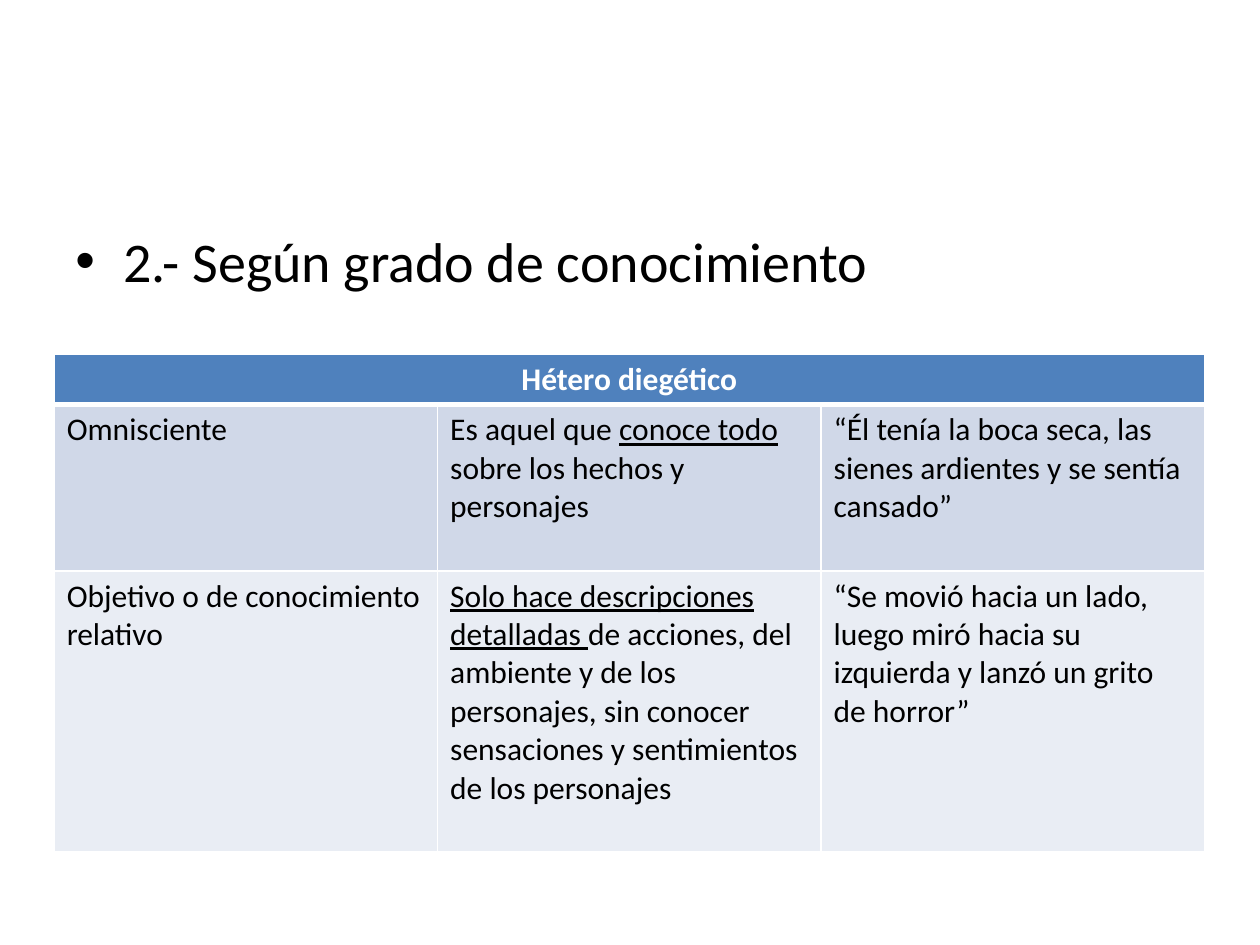
from lxml import etree
from pptx import Presentation
from pptx import util as u
from pptx.dml.color import RGBColor
from pptx.enum import text
from pptx.oxml.ns import qn

WIDE, HIGH = u.Inches(10), u.Inches(7.5)
FONT = "Calibri"
HEAD = "Hétero diegético"
# Each cell is a list of (words, underlined) runs.
ROWS = [
    [[("Omnisciente", False)],
     [("Es\u00a0aquel que ", False), ("conoce todo ", True),
      ("sobre los hechos\u00a0y personajes", False)],
     [("“Él tenía la boca seca, las sienes ardientes y se sentía cansado”", False)]],
    [[("Objetivo o de conocimiento relativo", False)],
     [("Solo hace descripciones detalladas ", True),
      ("de acciones, del ambiente y de los personajes, sin conocer "
       "sensaciones y sentimientos de los personajes", False)],
     [("“Se movió hacia un lado, luego miró hacia su izquierda "
       "y lanzó un grito de horror”", False)]],
]
FILLS = ["4F81BD", "D0D8E8", "E9EDF4"]
TALL = [0.4, 1.32, 2.23]


def paint(fill, code):
    fill.solid()
    fill.fore_color.rgb = RGBColor.from_string(code)


def style(para, size, code, bold=False):
    font = para.font
    font.name, font.size, font.bold = FONT, u.Pt(size), bold
    paint(font.fill, code)


def edge(cell, top, base):
    """Draw white borders, with the given top and base widths in points."""
    props = cell._tc.get_or_add_tcPr()
    for side, width in zip("LRTB", (1, 1, top, base)):
        line = etree.SubElement(props, qn(f"a:ln{side}"), w=str(u.Pt(width)))
        solid = etree.SubElement(line, qn("a:solidFill"))
        etree.SubElement(solid, qn("a:srgbClr"), val="FFFFFF")


def topic(slide, box):
    frame = slide.shapes.add_textbox(*box).text_frame
    frame.word_wrap = True
    para = frame.paragraphs[0]
    para.text = "2.- Según grado de conocimiento"
    para.space_before = u.Pt(6.4)
    style(para, 32, "000000")
    props = para._p.get_or_add_pPr()
    inset = u.Inches(0.38)
    props.set("marL", str(inset))
    props.set("indent", str(-inset))
    etree.SubElement(props, qn("a:buFont"), typeface="Arial")
    etree.SubElement(props, qn("a:buChar"), char="•")
    # Bullet marks precede the default run properties in the schema.
    props.append(props.find(qn("a:defRPr")))


def grid(slide, box):
    table = slide.shapes.add_table(len(TALL), 3, *box).table
    for row, tall in zip(table.rows, TALL):
        row.height = u.Inches(tall)
    for i, row in enumerate(table.rows):
        for cell in row.cells:
            edge(cell, 3 if i == 1 else 1, 3 if i == 0 else 1)
            paint(cell.fill, FILLS[i])
    head = table.cell(0, 0)
    head.merge(table.cell(0, 2))
    para = head.text_frame.paragraphs[0]
    para.text = HEAD
    para.alignment = text.PP_ALIGN.CENTER
    style(para, 18, "FFFFFF", True)
    for i, row in enumerate(ROWS, 1):
        for j, runs in enumerate(row):
            para = table.cell(i, j).text_frame.paragraphs[0]
            style(para, 18, "000000")
            for words, under in runs:
                run = para.add_run()
                run.text = words
                run.font.underline = under


def main():
    deck = Presentation()
    deck.slide_width, deck.slide_height = WIDE, HIGH
    slide = deck.slides.add_slide(deck.slide_layouts[6])
    topic(slide, [u.Inches(n) for n in (0.5, 1.75, 9, 4.95)])
    grid(slide, [u.Inches(n) for n in (0.43, 2.81, 9.13, sum(TALL))])
    deck.save("out.pptx")


if __name__ == "__main__":
    main()
